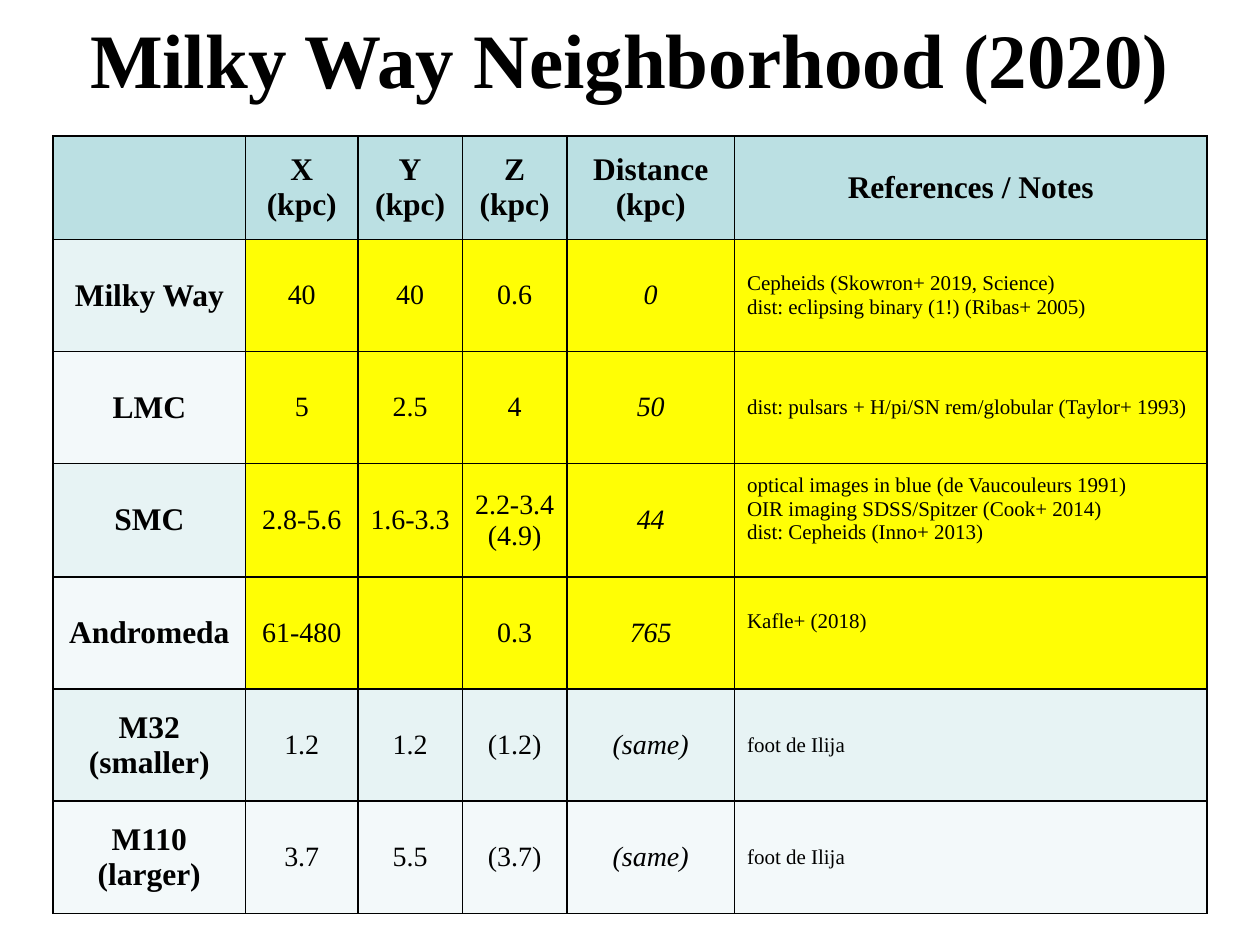
from dataclasses import dataclass

from lxml import etree
from pptx import Presentation
from pptx.dml.color import RGBColor
from pptx.enum.text import MSO_ANCHOR as Anchor, PP_ALIGN as Align
from pptx.oxml.ns import qn
from pptx.util import Inches, Pt

FONT = "Times New Roman"
BLACK, HEADER, YELLOW = "000000", "BBE0E3", "FFFE05"
BANDS = ("E7F3F4", "F3F9FA")
COL_WIDTHS = (1.53, 0.89, 0.83, 0.83, 1.33, 3.75)
ROW_HEIGHTS = (0.82, 0.89, 0.89, 0.9, 0.89, 0.89, 0.89)

# Text formats by role
TITLE = {"size": Pt(44), "bold": True, "italic": False}
LABEL = {"size": Pt(18), "bold": True, "italic": False}
VALUE = {"size": Pt(16), "bold": False, "italic": False}
DISTANCE = {"size": Pt(16), "bold": False, "italic": True}
NOTE = {"size": Pt(12), "bold": False, "italic": False}
COL_FORMATS = (LABEL, VALUE, VALUE, VALUE, DISTANCE, NOTE)


@dataclass
class Galaxy:
    cells: tuple[str, ...]
    highlighted: bool = True
    note_bottom: float = 0.05


HEADINGS = ("", "X\n(kpc)", "Y\n(kpc)", "Z\n(kpc)", "Distance (kpc)", "References / Notes")
GALAXIES = (
    Galaxy(("Milky Way", "40", "40", "0.6", "0",
            "Cepheids (Skowron+ 2019, Science)\ndist: eclipsing binary (1!) (Ribas+ 2005)")),
    Galaxy(("LMC", "5", "2.5", "4", "50",
            "dist: pulsars + H/pi/SN rem/globular (Taylor+ 1993)")),
    Galaxy(("SMC", "2.8-5.6", "1.6-3.3", "2.2-3.4\n(4.9)", "44",
            "optical images in blue (de Vaucouleurs 1991)\n"
            "OIR imaging SDSS/Spitzer (Cook+ 2014)\ndist: Cepheids (Inno+ 2013)"),
           note_bottom=0.23),
    Galaxy(("Andromeda", "61-480", "", "0.3", "765", "Kafle+ (2018)"), note_bottom=0.23),
    Galaxy(("M32\n(smaller)", "1.2", "1.2", "(1.2)", "(same)", "foot de Ilija"), False),
    Galaxy(("M110\n(larger)", "3.7", "5.5", "(3.7)", "(same)", "foot de Ilija"), False),
)


def color(hex_code: str) -> RGBColor:
    return RGBColor.from_string(hex_code)


def write(tf, text: str, fmt: dict, align=Align.CENTER) -> None:
    tf.word_wrap = True
    tf.text = text
    for p in tf.paragraphs:
        p.alignment = align
        for r in p.runs:
            r.font.name = FONT
            r.font.color.rgb = color(BLACK)
            for name, value in fmt.items():
                setattr(r.font, name, value)


def add_borders(cell) -> None:
    tc_pr = cell._tc.get_or_add_tcPr()
    for i, side in enumerate(("lnL", "lnR", "lnT", "lnB")):
        ln = etree.Element(qn(f"a:{side}"), w=str(Pt(1)))
        fill = etree.SubElement(ln, qn("a:solidFill"))
        etree.SubElement(fill, qn("a:srgbClr"), val=BLACK)
        tc_pr.insert(i, ln)


def fill_cell(cell, text: str, fmt: dict, fill: str, bottom: float = 0.05) -> None:
    cell.fill.solid()
    cell.fill.fore_color.rgb = color(fill)
    cell.vertical_anchor = Anchor.MIDDLE
    cell.margin_bottom = Inches(bottom)
    write(cell.text_frame, text, fmt, Align.LEFT if fmt is NOTE else Align.CENTER)
    add_borders(cell)


def main() -> None:
    prs = Presentation()
    prs.slide_width, prs.slide_height = Inches(10), Inches(7.5)
    s = prs.slides.add_slide(prs.slide_layouts[6])

    # Title
    tf = s.shapes.add_textbox(0, 0, Inches(10), Inches(0.92)).text_frame
    tf.vertical_anchor = Anchor.MIDDLE
    write(tf, "Milky Way Neighborhood (2020)", TITLE)

    # Table grid
    table = s.shapes.add_table(len(ROW_HEIGHTS), len(COL_WIDTHS), Inches(0.42), Inches(1.08),
                               Inches(sum(COL_WIDTHS)), Inches(sum(ROW_HEIGHTS))).table
    for col, width in zip(table.columns, COL_WIDTHS):
        col.width = Inches(width)
    for row, height in zip(table.rows, ROW_HEIGHTS):
        row.height = Inches(height)

    # Header row
    for c, text in enumerate(HEADINGS):
        fill_cell(table.cell(0, c), text, LABEL, HEADER)

    # Galaxy rows
    for i, galaxy in enumerate(GALAXIES):
        for c, (text, fmt) in enumerate(zip(galaxy.cells, COL_FORMATS)):
            fill = YELLOW if galaxy.highlighted and c > 0 else BANDS[i % 2]
            bottom = galaxy.note_bottom if fmt is NOTE else 0.05
            fill_cell(table.cell(i + 1, c), text, fmt, fill, bottom)

    prs.save("out.pptx")


if __name__ == "__main__":
    main()
